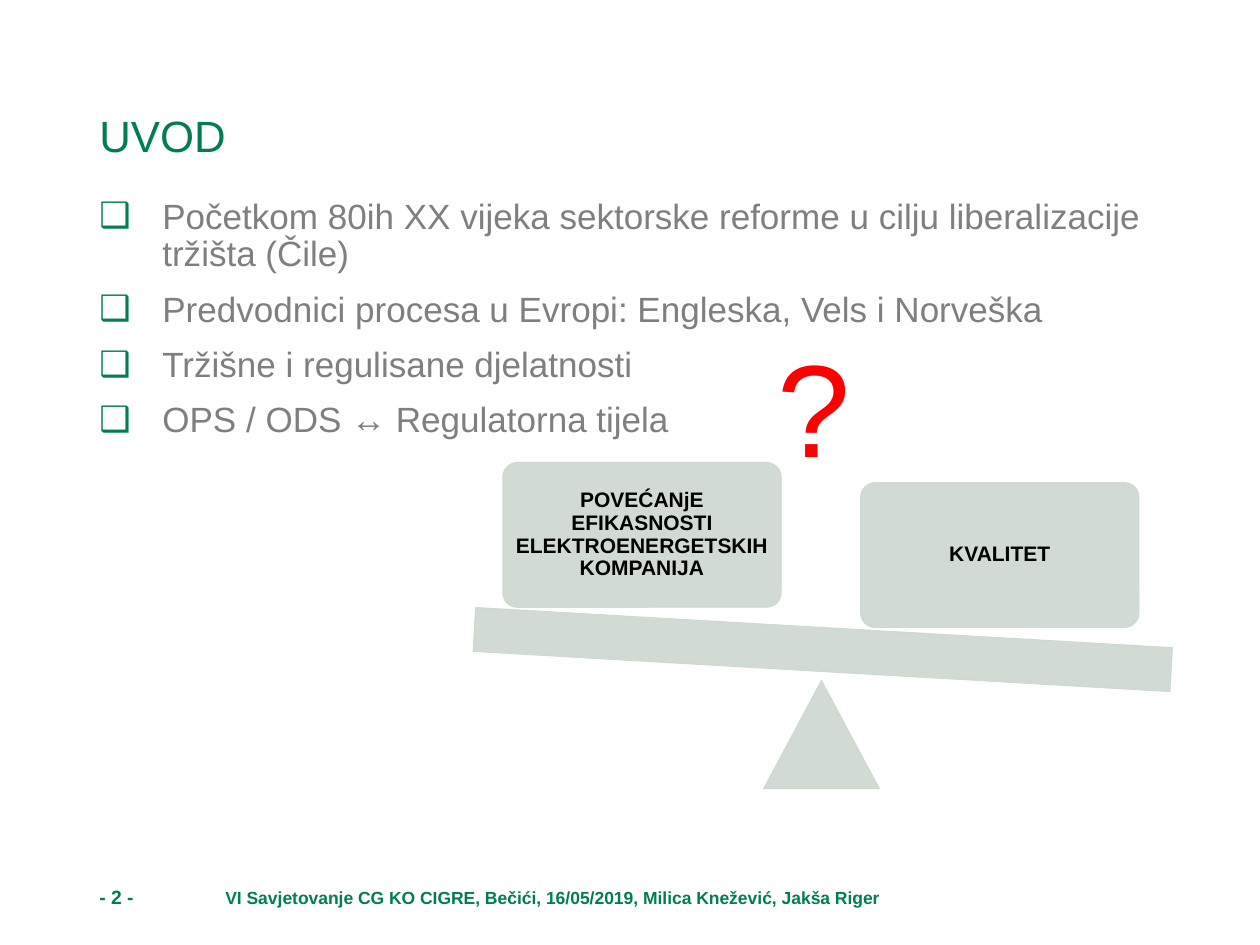
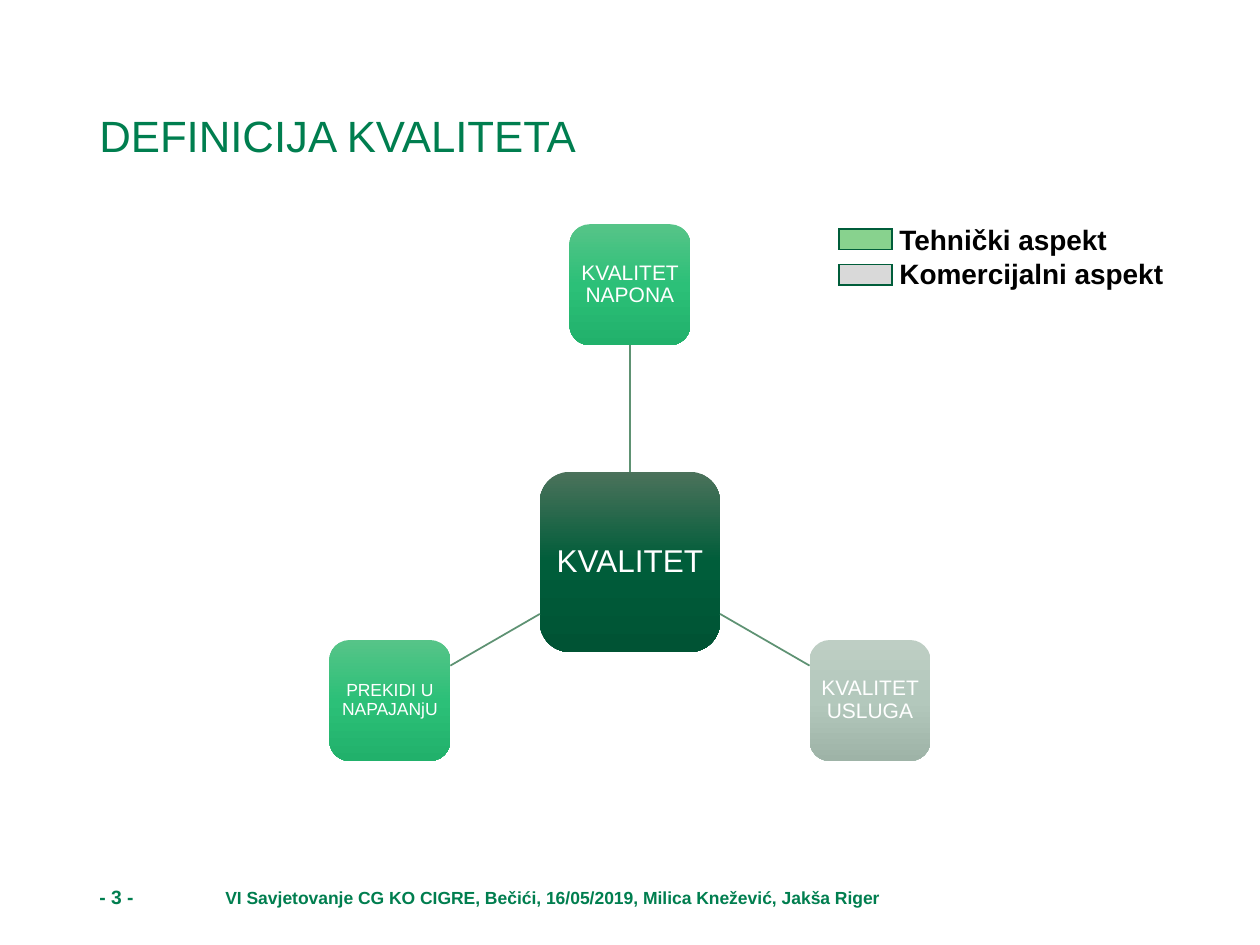
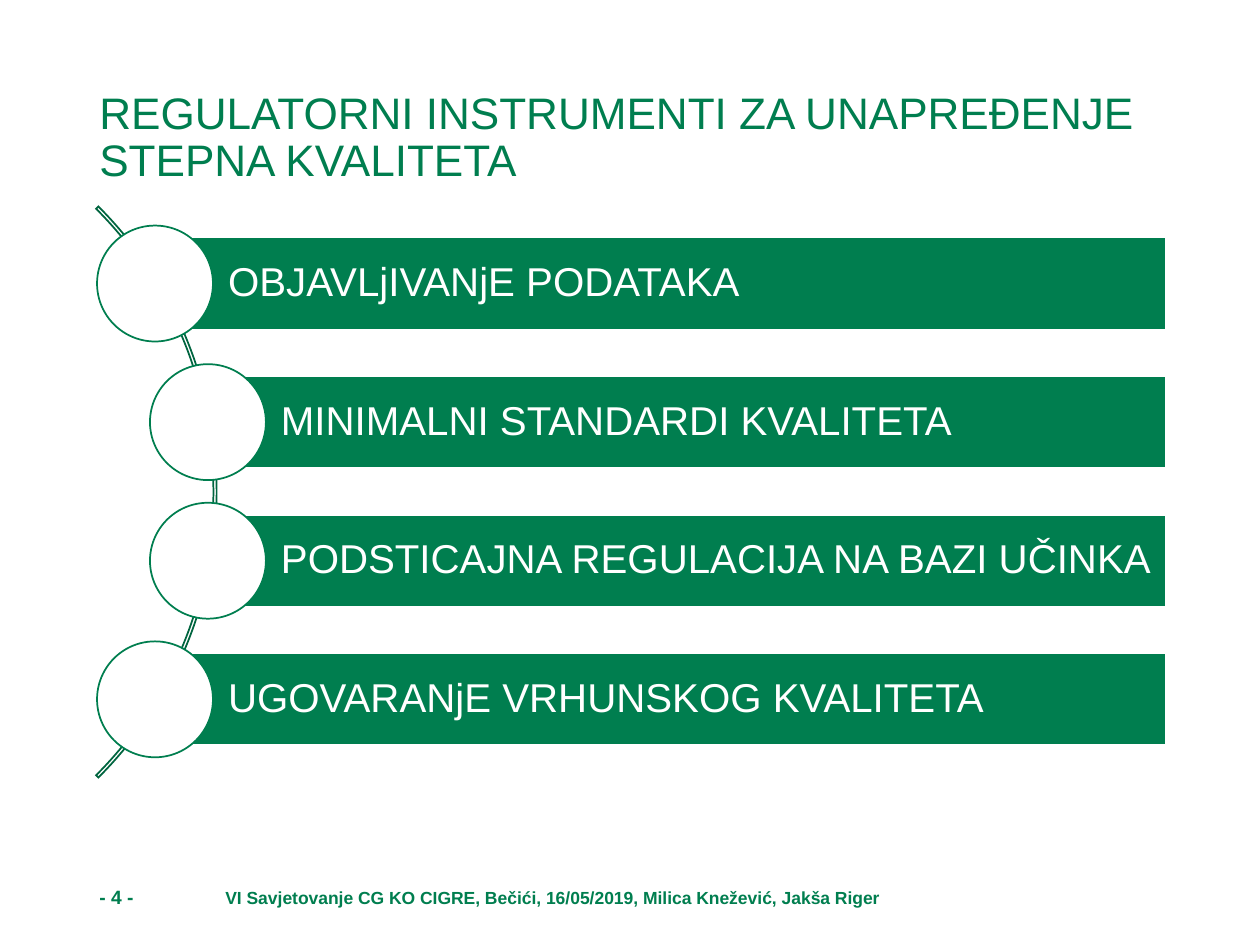
from copy import deepcopy
from dataclasses import dataclass
from math import cos, radians, sin

from lxml import etree
from pptx import Presentation
from pptx.dml.color import RGBColor
from pptx.enum.shapes import MSO_CONNECTOR, MSO_SHAPE
from pptx.enum.text import MSO_ANCHOR, PP_ALIGN
from pptx.oxml.ns import qn
from pptx.util import Inches, Pt

RECT, ROUNDED, OVAL = MSO_SHAPE.RECTANGLE, MSO_SHAPE.ROUNDED_RECTANGLE, MSO_SHAPE.OVAL
TRIANGLE, ARC = MSO_SHAPE.ISOSCELES_TRIANGLE, MSO_SHAPE.BLOCK_ARC
STRAIGHT = MSO_CONNECTOR.STRAIGHT
TOP, MIDDLE = MSO_ANCHOR.TOP, MSO_ANCHOR.MIDDLE
LEFT, CENTER = PP_ALIGN.LEFT, PP_ALIGN.CENTER


@dataclass(frozen=True)
class Theme:
    font: str = "Arial"
    green: str = "007E4F"
    dark_green: str = "005D3A"
    arc: str = "00653F"
    spoke: str = "5E9273"
    pale: str = "CCD8D0"
    gray: str = "7F7F7F"
    black: str = "000000"
    white: str = "FFFFFF"
    red: str = "FF0000"
    technical_key: str = "88D28E"
    commercial_key: str = "D9D9D9"
    hub: tuple = ("4B725B", "005D3A", "005334")
    technical: tuple = ("56C488", "2CC078", "21B16B")
    commercial: tuple = ("BECEC4", "B3C8BC", "9EB3A7")
    title: float = 25
    long_title: float = 25.2
    body: float = 20
    bar: float = 23
    hub_size: float = 18
    legend: float = 16
    label: float = 12
    small_label: float = 10
    page: float = 11
    footer: float = 10
    question: float = 75


T = Theme()
MARGIN, CONTENT_WIDTH = 0.69, 8.62

FOOTER = "VI Savjetovanje CG KO CIGRE, Bečići, 16/05/2019, Milica Knežević, Jakša Riger"
INTRO = [
    "Početkom 80ih XX vijeka sektorske reforme u cilju liberalizacije tržišta (Čile)",
    "Predvodnici procesa u Evropi: Engleska, Vels i Norveška",
    "Tržišne i regulisane djelatnosti",
    "OPS / ODS ↔ Regulatorna tijela",
]
WEIGHTS = [  # label, left, top
    ("POVEĆANjE EFIKASNOSTI ELEKTROENERGETSKIH KOMPANIJA", 3.99, 3.67),
    ("KVALITET", 6.83, 3.83),
]
QUALITY_ASPECTS = [  # label, direction from the hub in degrees, gradient, type size
    ("KVALITET NAPONA", -90, T.technical, T.label),
    ("KVALITET USLUGA", 30, T.commercial, T.label),
    ("PREKIDI U NAPAJANjU", 150, T.technical, T.small_label),
]
LEGEND = [("Tehnički aspekt", T.technical_key), ("Komercijalni aspekt", T.commercial_key)]
INSTRUMENTS = [  # label, centre of its circle from the left
    ("OBJAVLjIVANjE PODATAKA", 1.23),
    ("MINIMALNI STANDARDI KVALITETA", 1.65),
    ("PODSTICAJNA REGULACIJA NA BAZI UČINKA", 1.65),
    ("UGOVARANjE VRHUNSKOG KVALITETA", 1.23),
]


def rgb(color):
    return RGBColor.from_string(color)


def add_run(paragraph, text, size, color, bold=False):
    run = paragraph.add_run()
    run.text = text
    font = run.font
    font.name, font.size, font.bold = T.font, Pt(size), bold
    font.color.rgb = rgb(color)


def set_insets(frame, left, top, right, bottom):
    frame.margin_left, frame.margin_top = Inches(left), Inches(top)
    frame.margin_right, frame.margin_bottom = Inches(right), Inches(bottom)


def add_textbox(slide, box, anchor=TOP, wrap=True):
    frame = slide.shapes.add_textbox(*map(Inches, box)).text_frame
    frame.word_wrap, frame.vertical_anchor = wrap, anchor
    return frame


def add_shape(slide, kind, box, fill=None, line=None, width=1):
    """Fill is a colour, a tuple of three colours for a top-down gradient, or None."""
    shape = slide.shapes.add_shape(kind, *map(Inches, box))
    shape.shadow.inherit = False
    if fill is None:
        shape.fill.background()
    elif isinstance(fill, tuple):
        shape.fill.gradient()
        shape.fill.gradient_angle = 270
        stops = shape.element.spPr.find(".//" + qn("a:gsLst"))
        stops.insert(1, deepcopy(stops[0]))
        for stop, position, color in zip(shape.fill.gradient_stops, (0, 0.5, 1), fill):
            stop.position, stop.color.rgb = position, rgb(color)
    else:
        shape.fill.solid()
        shape.fill.fore_color.rgb = rgb(fill)
    if line is None:
        shape.line.fill.background()
    else:
        shape.line.color.rgb, shape.line.width = rgb(line), Pt(width)
        outline = shape.element.spPr.find(qn("a:ln"))
        etree.SubElement(outline, qn("a:miter"), lim="800000")
    return shape


def add_label(shape, text, size, color, insets, bold=False, align=CENTER):
    frame = shape.text_frame
    frame.word_wrap, frame.vertical_anchor = True, MIDDLE
    set_insets(frame, *insets)
    paragraph = frame.paragraphs[0]
    paragraph.alignment, paragraph.line_spacing = align, 0.9
    add_run(paragraph, text, size, color, bold)


def add_seesaw_part(slide, kind, box):
    part = add_shape(slide, kind, box, T.pale, T.pale, 0.5)
    for color in part.element.spPr.iter(qn("a:srgbClr")):
        etree.SubElement(color, qn("a:alpha"), val="90000")
    return part


def add_spoke(slide, start, end):
    spoke = slide.shapes.add_connector(STRAIGHT, *map(Inches, (*start, *end)))
    spoke.line.color.rgb, spoke.line.width = rgb(T.spoke), Pt(1)
    etree.SubElement(spoke.element.spPr, qn("a:effectLst"))


def add_bullet(paragraph):
    properties = paragraph._p.get_or_add_pPr()
    properties.set("marL", str(Inches(0.5)))
    properties.set("indent", str(-Inches(0.5)))
    color = etree.SubElement(properties, qn("a:buClr"))
    etree.SubElement(color, qn("a:srgbClr"), val=T.green)
    etree.SubElement(properties, qn("a:buFont"), typeface=T.font)
    etree.SubElement(properties, qn("a:buChar"), char="❑")


def add_tab_stop(paragraph, position):
    stops = etree.SubElement(paragraph._p.get_or_add_pPr(), qn("a:tabLst"))
    etree.SubElement(stops, qn("a:tab"), pos=str(Inches(position)), algn="l")


def start_slide(deck, page, title, size=T.title):
    slide = deck.slides.add_slide(deck.slide_layouts[6])
    heading = add_textbox(slide, (MARGIN, 0.69, CONTENT_WIDTH, 0.82), MIDDLE).paragraphs[0]
    heading.line_spacing = 0.9
    add_run(heading, title, size, T.green)
    footer = add_textbox(slide, (MARGIN, 6.98, CONTENT_WIDTH, 0.29)).paragraphs[0]
    add_tab_stop(footer, 1)
    add_run(footer, f"- {page} -", T.page, T.green, True)
    add_run(footer, "\t" + FOOTER, T.footer, T.green, True)
    return slide


def build_intro(deck):
    slide = start_slide(deck, 2, "UVOD")
    for label, left, top in WEIGHTS:
        weight = add_seesaw_part(slide, ROUNDED, (left, top, 2.21, 1.15))
        weight.adjustments[0] = 0.1
        add_label(weight, label, T.label, T.black, [0.05] * 4, bold=True)
    add_seesaw_part(slide, TRIANGLE, (6.06, 5.4, 0.92, 0.86))
    add_seesaw_part(slide, RECT, (3.76, 4.98, 5.54, 0.35)).rotation = 3.3

    points = add_textbox(slide, (MARGIN, 1.53, CONTENT_WIDTH, 4.76))
    for i, text in enumerate(INTRO):
        point = points.add_paragraph() if i else points.paragraphs[0]
        add_bullet(point)
        point.line_spacing, point.space_before = 0.9, Pt(10 if i else 0)
        add_run(point, text, T.body, T.gray)
    question = add_textbox(slide, (6.07, 2.54, 1, 1.36))
    add_run(question.paragraphs[0], "?", T.question, T.red)


def build_definition(deck):
    slide = start_slide(deck, 3, "DEFINICIJA KVALITETA")
    hub_x, hub_y, hub_side, aspect_side, reach = 5, 4.46, 1.43, 0.96, 2.2
    hub_box = (hub_x - hub_side / 2, hub_y - hub_side / 2, hub_side, hub_side)
    hub = add_shape(slide, ROUNDED, hub_box, T.hub)
    add_label(hub, "KVALITET", T.hub_size, T.white, [0.05] * 4)
    for label, degrees, gradient, size in QUALITY_ASPECTS:
        dx, dy = cos(radians(degrees)), sin(radians(degrees))
        to_edge = 0.5 / max(abs(dx), abs(dy))  # centre to edge of a unit square
        near, far = hub_side * to_edge, reach - aspect_side * to_edge
        add_spoke(slide, *((hub_x + d * dx, hub_y + d * dy) for d in (near, far)))
        left = hub_x + reach * dx - aspect_side / 2
        top = hub_y + reach * dy - aspect_side / 2
        aspect = add_shape(slide, ROUNDED, (left, top, aspect_side, aspect_side), gradient)
        add_label(aspect, label, size, T.white, [0.03] * 4)

    names = add_textbox(slide, (7.04, 1.72, 2.32, 0.64), wrap=False)
    for i, (name, color) in enumerate(LEGEND):
        add_shape(slide, RECT, (6.66, 1.82 + 0.28 * i, 0.42, 0.16), color, T.dark_green)
        entry = names.add_paragraph() if i else names.paragraphs[0]
        add_run(entry, name, T.legend, T.black, True)


def build_instruments(deck):
    slide = start_slide(
        deck, 4, "REGULATORNI INSTRUMENTI ZA UNAPREĐENJE STEPNA KVALITETA", T.long_title)
    arc = add_shape(slide, ARC, (-4.69, 0.7, 6.41, 6.41), line=T.arc)
    for i, value in enumerate((189, 27, 0.004)):  # from 315 to 45 degrees, thin
        arc.adjustments[i] = value
    bar_right, bar_height, circle = 9.25, 0.73, 0.92
    for i, (label, left) in enumerate(INSTRUMENTS):
        middle = 2.25 + 1.1 * i
        bar_box = (left, middle - bar_height / 2, bar_right - left, bar_height)
        bar = add_shape(slide, RECT, bar_box, T.green, T.white)
        add_label(bar, label, T.bar, T.white, (0.58, 0.06, 0.06, 0.06), align=LEFT)
        circle_box = (left - circle / 2, middle - circle / 2, circle, circle)
        add_shape(slide, OVAL, circle_box, T.white, T.green)


def main():
    deck = Presentation()
    deck.slide_width, deck.slide_height = Inches(10), Inches(7.5)
    for build in (build_intro, build_definition, build_instruments):
        build(deck)
    deck.save("out.pptx")


if __name__ == "__main__":
    main()
